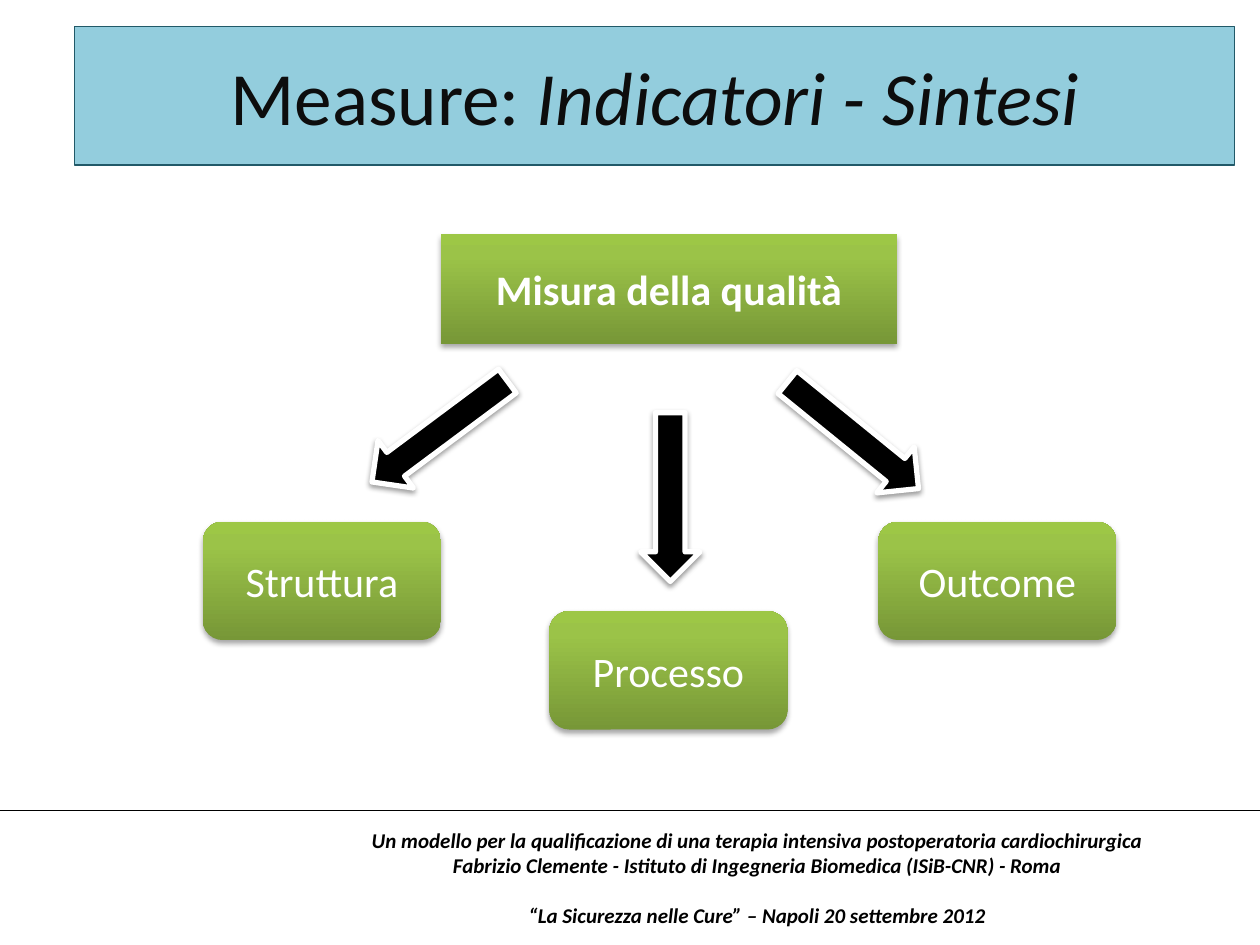
import copy

import lxml.etree
import pptx
import pptx.dml.color
import pptx.enum.shapes
import pptx.enum.text
import pptx.oxml.ns
import pptx.util

Inches = pptx.util.Inches
Pt = pptx.util.Pt
SHAPE = pptx.enum.shapes.MSO_SHAPE
qn = pptx.oxml.ns.qn


def write(para, text, size=24, color="FFFFFF", bold=False, italic=False):
    """Add a centred run of text to a paragraph."""
    para.alignment = pptx.enum.text.PP_ALIGN.CENTER
    span = para.add_run()
    span.text = text
    span.font.name = "Calibri"
    span.font.size = Pt(size)
    span.font.bold = bold
    span.font.italic = italic
    span.font.color.rgb = pptx.dml.color.RGBColor.from_string(color)


def add_drop_shadow(shape, distance, opacity):
    shape.shadow.inherit = False
    effects = shape._element.spPr.find(qn("a:effectLst"))
    shadow = lxml.etree.SubElement(
        effects, qn("a:outerShdw"), blurRad=str(Pt(3.1)),
        dist=str(Pt(distance)), dir="5400000", rotWithShape="0")
    color = lxml.etree.SubElement(shadow, qn("a:srgbClr"), val="000000")
    lxml.etree.SubElement(color, qn("a:alpha"), val=str(opacity * 1000))


rgb = pptx.dml.color.RGBColor.from_string
middle = pptx.enum.text.MSO_ANCHOR.MIDDLE

deck = pptx.Presentation()
deck.slide_width, deck.slide_height = Inches(10), Inches(7.5)
page = deck.slides.add_slide(deck.slide_layouts[5])

# Title band
title = page.shapes.title
title.left, title.top = Inches(0.59), Inches(0.21)
title.width, title.height = Inches(9.21), Inches(1.1)
title.fill.solid()
title.fill.fore_color.rgb = rgb("93CDDD")
title.line.color.rgb = rgb("215968")
title.line.width = Pt(0.75)
title.text_frame.auto_size = pptx.enum.text.MSO_AUTO_SIZE.NONE
title.text_frame.vertical_anchor = middle
heading = title.text_frame.paragraphs[0]
write(heading, "Measure: ", size=43, color="0D0D0D")
write(heading, "Indicatori - Sintesi", size=43, color="0D0D0D", italic=True)

# Green boxes: the measure on top, its three indicators below
boxes = [
    ("Misura della qualità", SHAPE.RECTANGLE, 3.5, 1.86, 3.62, 0.87),
    ("Struttura", SHAPE.ROUNDED_RECTANGLE, 1.61, 4.14, 1.89, 0.94),
    ("Processo", SHAPE.ROUNDED_RECTANGLE, 4.36, 4.85, 1.89, 0.94),
    ("Outcome", SHAPE.ROUNDED_RECTANGLE, 6.97, 4.14, 1.89, 0.94),
]
gradient = [(0, "779737"), (0.8, "9BC348"), (1, "9DC746")]
for label, kind, left, top, width, height in boxes:
    box = page.shapes.add_shape(
        kind, Inches(left), Inches(top), Inches(width), Inches(height))
    box.fill.gradient()
    box.fill.gradient_angle = 90
    stop_list = box._element.spPr.find(qn("a:gradFill")).find(qn("a:gsLst"))
    stop_list.append(copy.deepcopy(stop_list[-1]))
    for stop, (position, color) in zip(box.fill.gradient_stops, gradient):
        stop.position = position
        stop.color.rgb = rgb(color)
    box.line.fill.background()
    add_drop_shadow(box, distance=1.8, opacity=35)
    box.text_frame.word_wrap = True
    box.text_frame.vertical_anchor = middle
    write(box.text_frame.paragraphs[0], label, bold=kind == SHAPE.RECTANGLE)

# Arrows from the measure to each indicator
for left, top, rotation in [(2.82, 3.19, 323.3), (4.65, 3.71, 270),
                            (6.1, 3.22, 219.1)]:
    arrow = page.shapes.add_shape(
        SHAPE.LEFT_ARROW, Inches(left), Inches(top), Inches(1.34), Inches(0.47))
    arrow.rotation = rotation
    arrow.fill.solid()
    arrow.fill.fore_color.rgb = rgb("000000")
    arrow.line.color.rgb = rgb("FFFFFF")
    arrow.line.width = Pt(3)
    add_drop_shadow(arrow, distance=1.6, opacity=38)

# Footer
rule = page.shapes.add_connector(
    pptx.enum.shapes.MSO_CONNECTOR.STRAIGHT,
    Inches(0), Inches(6.43), Inches(10), Inches(6.43))
rule.line.color.rgb = rgb("000000")
rule.line.width = Pt(0.75)
lxml.etree.SubElement(rule._element.spPr, qn("a:effectLst"))

footer = page.shapes.add_textbox(
    Inches(2.72), Inches(6.43), Inches(6.58), Inches(1.07))
footer.text_frame.word_wrap = True
footer.text_frame.vertical_anchor = middle
footer_lines = [
    ("Un modello per la qualificazione di una terapia intensiva "
     "postoperatoria cardiochirurgica", 0),
    ("Fabrizio Clemente - Istituto di Ingegneria Biomedica (ISiB-CNR) - Roma", 0),
    ("“La Sicurezza nelle Cure” – Napoli 20 settembre 2012", 14),
]
for number, (text, gap) in enumerate(footer_lines):
    frame = footer.text_frame
    para = frame.add_paragraph() if number else frame.paragraphs[0]
    para.space_before = Pt(gap)
    write(para, text, size=12, color="000000", bold=True, italic=True)

deck.save("out.pptx")
